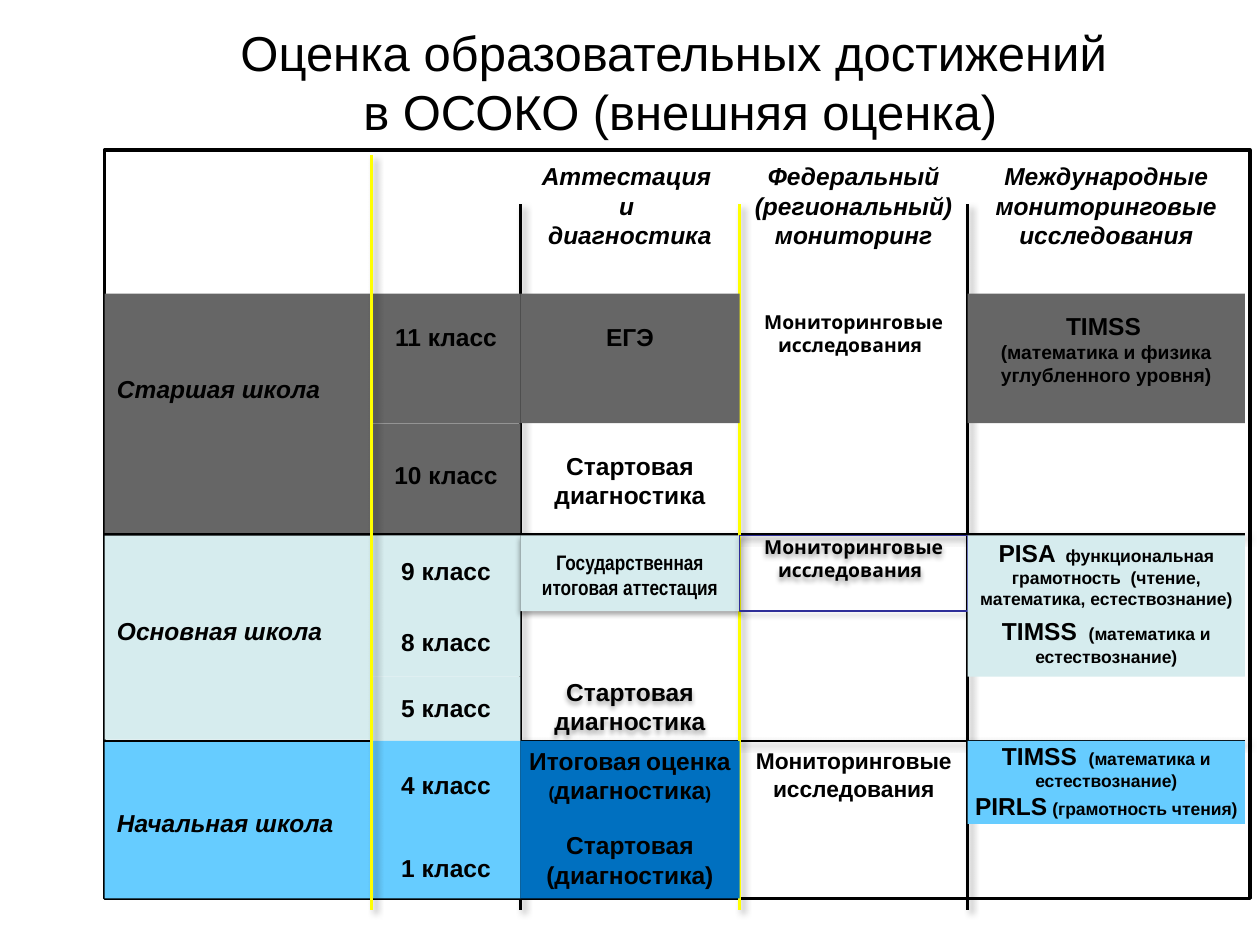
from dataclasses import dataclass
from lxml import etree
from pptx import Presentation
from pptx.dml.color import RGBColor
from pptx.enum.shapes import MSO_CONNECTOR, MSO_SHAPE
from pptx.enum.text import MSO_ANCHOR, PP_ALIGN
from pptx.oxml.ns import qn
from pptx.util import Inches, Pt

RECT, STRAIGHT = MSO_SHAPE.RECTANGLE, MSO_CONNECTOR.STRAIGHT
LEFT, CENTER = PP_ALIGN.LEFT, PP_ALIGN.CENTER
TOP, MIDDLE = MSO_ANCHOR.TOP, MSO_ANCHOR.MIDDLE

COLS = [0.83, 2.95, 4.13, 5.87, 7.68, 9.88]
ROWS = [1.23, 2.33, 3.36, 4.24, 4.85, 5.37, 5.88, 6.54, 7.13]
STAGE_ROWS = (3, 6)


@dataclass(frozen=True)
class Theme:
    black: str = "000000"
    yellow: str = "FFFF00"
    senior: str = "666666"
    middle: str = "D6ECEE"
    primary: str = "66CCFF"
    accent: str = "0070C0"
    outline: str = "2F2F98"
    font: str = "Arial"
    narrow: str = "Arial Narrow"
    comic: str = "Comic Neue"
    title: float = 28
    body: float = 14
    monitor: float = 13
    exam: float = 12
    note: float = 11
    small: float = 10


T = Theme()


def rgb(value):
    return RGBColor.from_string(value)


def write(tf, paragraphs, *, size=T.body, font=T.font, bold=True, italic=False,
          align=CENTER, anchor=TOP, pad=0.05, side=0.1):
    tf.word_wrap = True
    tf.vertical_anchor = anchor
    tf.margin_left = tf.margin_right = Inches(side)
    tf.margin_top, tf.margin_bottom = Inches(pad), 0
    if isinstance(paragraphs, str):
        paragraphs = [[(paragraphs, size)]]
    for i, runs in enumerate(paragraphs):
        p = tf.paragraphs[0] if i == 0 else tf.add_paragraph()
        p.alignment = align
        for text, points in runs:
            for j, line in enumerate(text.split("\n")):
                if j:
                    p.add_line_break()
                r = p.add_run()
                r.text = line
                r.font.name, r.font.size = font, Pt(points)
                r.font.bold, r.font.italic = bold, italic
                r.font.color.rgb = rgb(T.black)


def add_shadow(shape, blur, dist, angle, alpha):
    effects = etree.SubElement(shape._element.spPr, qn("a:effectLst"))
    outer = etree.SubElement(effects, qn("a:outerShdw"), blurRad=str(Pt(blur)),
                             dist=str(Pt(dist)), dir=str(angle * 60000),
                             algn="ctr", rotWithShape="0")
    color = etree.SubElement(outer, qn("a:srgbClr"), val=T.black)
    etree.SubElement(color, qn("a:alpha"), val=str(alpha * 1000))


class Deck:
    def __init__(self):
        self.prs = Presentation()
        self.prs.slide_width, self.prs.slide_height = Inches(10), Inches(7.5)
        self.s = self.prs.slides.add_slide(self.prs.slide_layouts[6])

    def box(self, x, y, w, h, fill=None, line=None, width=0.75, shadow=False):
        sp = self.s.shapes.add_shape(RECT, *map(Inches, (x, y, w, h)))
        if fill:
            sp.fill.solid()
            sp.fill.fore_color.rgb = rgb(fill)
        else:
            sp.fill.background()
        if line:
            sp.line.color.rgb = rgb(line)
            sp.line.width = Pt(width)
        else:
            sp.line.fill.background()
        if shadow:
            add_shadow(sp, 3.1, 1.8, 90, 35)
        else:
            sp.shadow.inherit = False
        return sp

    def title(self, text):
        sp = self.s.shapes.add_textbox(*map(Inches, (0.8, 0.21, 9.2, 0.87)))
        write(sp.text_frame, text, size=T.title, bold=False, anchor=MIDDLE, pad=0)

    def rule(self, x1, y1, x2, y2, color=T.black):
        c = self.s.shapes.add_connector(STRAIGHT, *map(Inches, (x1, y1, x2, y2)))
        c.line.color.rgb = rgb(color)
        c.line.width = Pt(1.5)
        add_shadow(c, 4, 3, 45, 40)

    def cell(self, col, row, text, span=1, fill=None, line=None, shadow=False, **fmt):
        end = row + span
        ruled = STAGE_ROWS if col == 0 else STAGE_ROWS[:1]
        top = ROWS[row] + 0.01 * (row in ruled)
        bottom = ROWS[end] - 0.01 * (end in ruled)
        area = COLS[col], top, COLS[col + 1] - COLS[col], bottom - top
        if fill or line or shadow:
            sp = self.box(*area, fill=fill, line=line, shadow=shadow)
        else:
            sp = self.s.shapes.add_textbox(*map(Inches, area))
        write(sp.text_frame, text, **fmt)


def main():
    d = Deck()
    d.box(0.83, 1.19, 9.09, 5.94, line=T.black, width=2)
    for row in STAGE_ROWS:
        d.rule(COLS[0], ROWS[row], COLS[-1], ROWS[row])
    d.title("Оценка образовательных достижений \nв ОСОКО (внешняя оценка)")
    for col, color in ((2, T.black), (4, T.black), (3, T.yellow)):
        d.rule(COLS[col], 1.62, COLS[col], 7.22, color)

    for row, span, text, fill, pad in (
            (1, 2, "Старшая школа", T.senior, 0.64),
            (3, 3, "Основная школа", T.middle, 0.64),
            (6, 2, "Начальная школа", T.primary, 0.52)):
        d.cell(0, row, text, span, fill, italic=True, align=LEFT, pad=pad)

    for col, text, side in (
            (2, "Аттестация \nи \nдиагностика", 0.1),
            (3, "Федеральный (региональный) мониторинг", 0.1),
            (4, "Международные мониторинговые исследования", 0.05)):
        d.cell(col, 0, text, italic=True, side=side)

    for row, grade, fill, pad in (
            (1, 11, T.senior, 0.23), (2, 10, T.senior, 0.29),
            (3, 9, T.middle, 0.16), (4, 8, T.middle, 0.13), (5, 5, T.middle, 0.13),
            (6, 4, T.primary, 0.23), (7, 1, T.primary, 0.23)):
        d.cell(1, row, f"{grade} класс", fill=fill, pad=pad)

    d.cell(2, 1, "ЕГЭ", fill=T.senior, pad=0.23)
    d.cell(2, 2, "Стартовая диагностика", pad=0.22)
    d.cell(2, 3, "Государственная итоговая аттестация", fill=T.middle, shadow=True,
           size=T.exam, font=T.narrow, pad=0.11, side=0)
    d.cell(2, 5, "Стартовая диагностика", shadow=True, pad=0, side=0.08)
    d.cell(2, 6, [[("Итоговая", T.body), (" ", T.small), ("оценка", T.body),
                   (" (", T.small), ("диагностика", T.body), (")", T.small)]],
           fill=T.accent, pad=0.04, side=0)
    d.cell(2, 7, "Стартовая (диагностика)", fill=T.accent)

    monitoring = "Мониторинговые исследования"
    comic = dict(size=T.note, font=T.comic, side=0)
    d.cell(3, 1, monitoring + " ", pad=0.13, **comic)
    d.cell(3, 3, monitoring + " ", line=T.outline, shadow=True, pad=0, **comic)
    d.cell(3, 6, monitoring, size=T.monitor)

    timss = [("TIMSS ", T.body), (" (математика и естествознание)", T.small)]
    pirls = [("PIRLS", T.body), (" (грамотность чтения)", T.small)]
    pisa = [("PISA", T.body), ("  функциональная грамотность  "
                               "(чтение, математика, естествознание)", T.small)]
    advanced = [("TIMSS", T.body),
                (" \n(математика и физика углубленного уровня)", T.note)]
    for row, paragraphs, fill, pad, side in (
            (1, [advanced], T.senior, 0.14, 0), (3, [pisa], T.middle, 0.02, 0),
            (4, [timss], T.middle, 0.04, 0.1), (6, [timss, pirls], T.primary, 0, 0)):
        d.cell(4, row, paragraphs, fill=fill, pad=pad, side=side)

    d.rule(COLS[1], ROWS[0], COLS[1], 7.22, T.yellow)
    d.prs.save("out.pptx")


if __name__ == "__main__":
    main()
